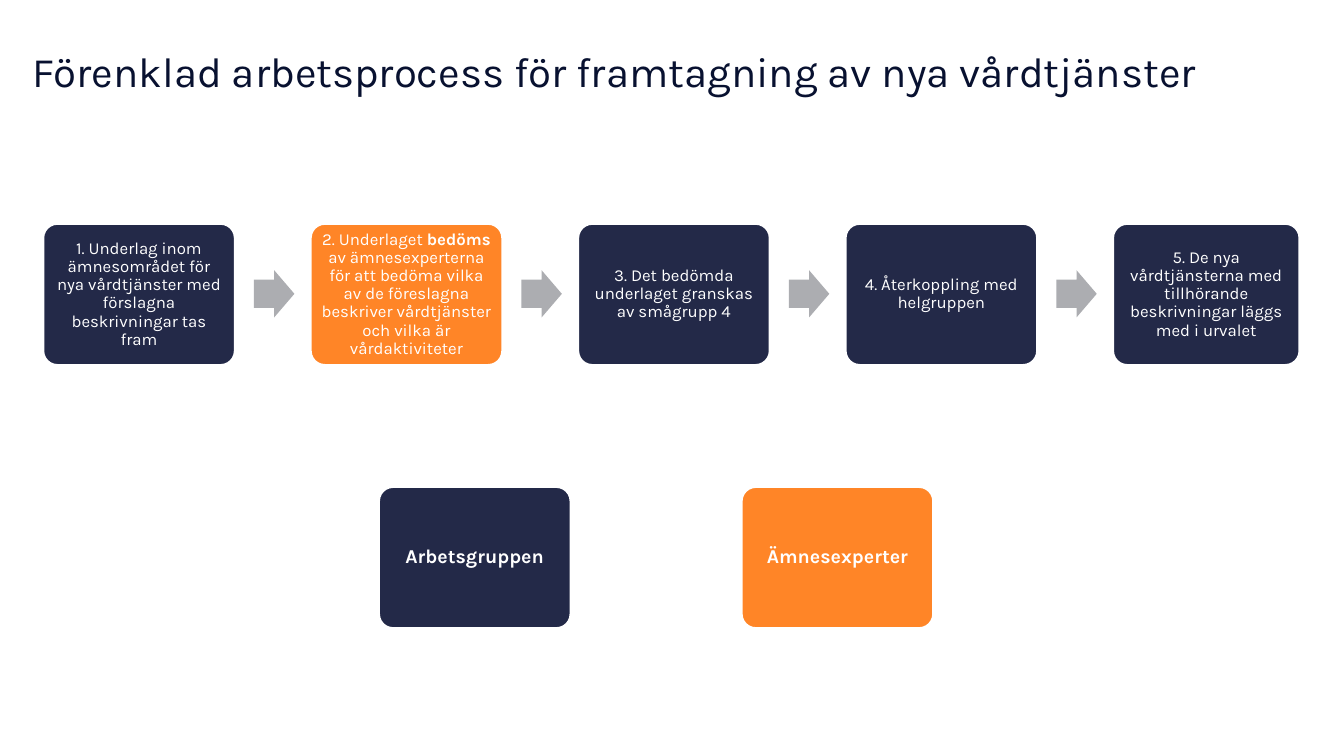
from pptx import Presentation
from pptx import util as u
from pptx.dml import color
from pptx.enum import shapes, text

COLORS = {
    "title": "081130",
    "group": "232948",
    "experts": "FF8527",
    "arrow": "ACADB1",
    "white": "FFFFFF",
}


def rgb(name):
    return color.RGBColor.from_string(COLORS[name])


def write(frame, runs, size=12, ink="white", align=text.PP_ALIGN.CENTER,
          anchor=text.MSO_ANCHOR.MIDDLE, spacing=0.9, inset=0.13):
    frame.word_wrap = True
    frame.vertical_anchor = anchor
    frame.margin_left = frame.margin_right = u.Cm(inset)
    frame.margin_top = frame.margin_bottom = u.Cm(0.13)
    paragraph = frame.paragraphs[0]
    paragraph.alignment = align
    paragraph.line_spacing = spacing
    for words, bold in runs:
        run = paragraph.add_run()
        run.text = words
        run.font.name = "Karla"
        run.font.size = u.Pt(size)
        run.font.bold = bold
        run.font.color.rgb = rgb(ink)


prs = Presentation()
prs.slide_width, prs.slide_height = u.Cm(33.87), u.Cm(19.05)
slide = prs.slides.add_slide(prs.slide_layouts[5])

title = slide.shapes.title
title.left, title.top, title.width, title.height = u.Cm(0.58), u.Cm(1.02), u.Cm(31.67), u.Cm(1.55)
write(title.text_frame, [("Förenklad arbetsprocess för framtagning av nya vårdtjänster", False)],
      size=30, ink="title", align=text.PP_ALIGN.LEFT, anchor=text.MSO_ANCHOR.TOP,
      spacing=1.0, inset=0.25)
title.text_frame.auto_size = text.MSO_AUTO_SIZE.SHAPE_TO_FIT_TEXT

steps = [
    ("group", [("1. Underlag inom ämnesområdet för nya vårdtjänster med förslagna beskrivningar tas fram", False)]),
    ("experts", [
        ("2. Underlaget ", False),
        ("bedöms", True),
        (" av ämnesexperterna för att bedöma vilka av de föreslagna beskriver vårdtjänster och vilka är vårdaktiviteter", False),
    ]),
    ("group", [("3. Det bedömda underlaget granskas av smågrupp 4", False)]),
    ("group", [("4. Återkoppling med helgruppen", False)]),
    ("group", [("5. De nya vårdtjänsterna med tillhörande beskrivningar läggs med i urvalet", False)]),
]
legend = [
    ("group", [("Arbetsgruppen", True)]),
    ("experts", [("Ämnesexperter", True)]),
]

step_left, step_pitch, step_width, last_width = 1.09, 6.74, 4.83, 4.7
cards = []
for i, (owner, runs) in enumerate(steps):
    width = last_width if i == len(steps) - 1 else step_width
    cards.append((step_left + i * step_pitch, 5.64, width, owner, runs, 12))
for i, (owner, runs) in enumerate(legend):
    cards.append((9.55 + i * 9.14, 12.27, step_width, owner, runs, 14))

for left, top, width, owner, runs, size in cards:
    card = slide.shapes.add_shape(shapes.MSO_SHAPE.ROUNDED_RECTANGLE,
                                  u.Cm(left), u.Cm(top), u.Cm(width), u.Cm(3.56))
    card.adjustments[0] = 0.1
    card.shadow.inherit = False
    card.fill.solid()
    card.fill.fore_color.rgb = rgb(owner)
    card.line.color.rgb = rgb("white")
    card.line.width = u.Pt(1.5)
    write(card.text_frame, runs, size=size)

for i in range(len(steps) - 1):
    arrow = slide.shapes.add_shape(shapes.MSO_SHAPE.RIGHT_ARROW,
                                   u.Cm(step_left + i * step_pitch + 5.31), u.Cm(6.81),
                                   u.Cm(1.02), u.Cm(1.19))
    arrow.adjustments[0] = 0.6
    arrow.adjustments[1] = 0.5
    arrow.shadow.inherit = False
    arrow.fill.solid()
    arrow.fill.fore_color.rgb = rgb("arrow")
    arrow.line.fill.background()

prs.save("out.pptx")
